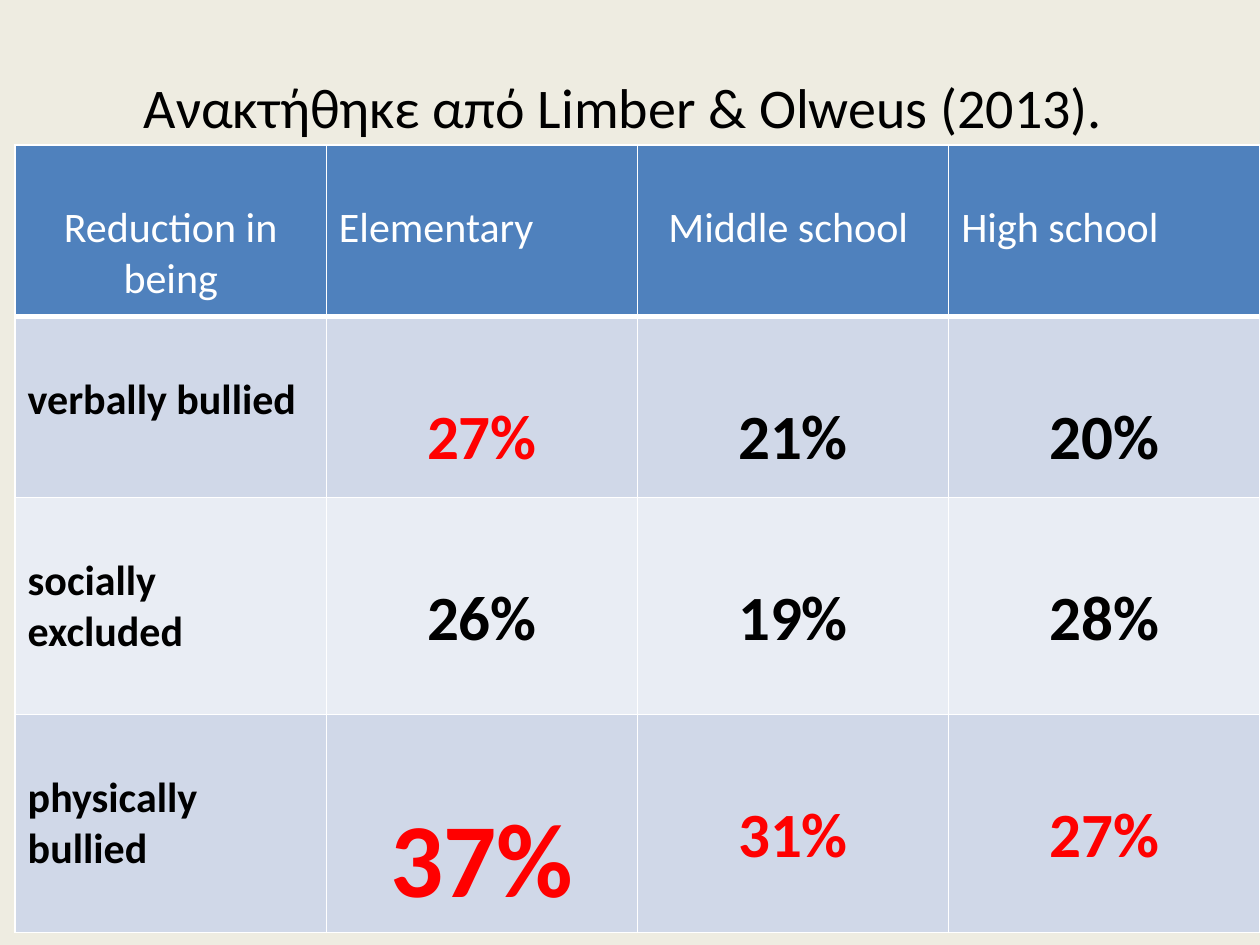
"""Build a slide with a table of reductions in bullying by school level."""
from dataclasses import dataclass

from pptx import Presentation
from pptx import util as u
from pptx.dml.color import RGBColor
from pptx.enum import text
from pptx.oxml import parse_xml
from pptx.oxml.ns import nsdecls


@dataclass(frozen=True)
class Theme:
    """Colours, font and type sizes of the slide."""
    font: str = "Calibri"
    background: str = "EEECE1"
    header: str = "4F81BD"
    bands: tuple = ("D0D8E8", "E9EDF4")
    white: str = "FFFFFF"
    black: str = "000000"
    highlight: str = "FF0000"
    title_size: int = 32
    label_size: int = 24
    value_size: int = 36
    largest_size: int = 60


THEME = Theme()
LEFT, CENTER = text.PP_ALIGN.LEFT, text.PP_ALIGN.CENTER
COLUMN_WIDTH = 2.47
ROW_HEIGHTS = (1.36, 1.44, 1.72, 1.73)
LABEL_TOP, VALUE_TOP = 0.46, 0.66
HEADERS = (("Reduction in being", CENTER), ("Elementary", LEFT),
           ("Middle school ", CENTER), ("High school", LEFT))
ROWS = (("verbally bullied", ("27%", "21%", "20%")),
        ("socially excluded", ("26%", "19%", "28%")),
        ("physically bullied", ("37%", "31%", "27%")))
HIGHLIGHTED = {(1, 1), (3, 1), (3, 2), (3, 3)}
LARGEST = (3, 1)


def add_text(frame, wording, size, color, alignment, bold=False):
    """Write one run in the first paragraph of a text frame."""
    frame.word_wrap = True
    paragraph = frame.paragraphs[0]
    paragraph.alignment = alignment
    run = paragraph.add_run()
    run.text = wording
    run.font.name = THEME.font
    run.font.size = u.Pt(size)
    run.font.bold = bold
    run.font.color.rgb = RGBColor.from_string(color)


def add_borders(cell, bottom_width=1):
    """Draw white lines on the four sides of a cell."""
    properties = cell._tc.get_or_add_tcPr()
    widths = {"lnL": 1, "lnR": 1, "lnT": 1, "lnB": bottom_width}
    for index, (side, width) in enumerate(widths.items()):
        properties.insert(index, parse_xml(
            f'<a:{side} {nsdecls("a")} w="{u.Pt(width)}"><a:solidFill>'
            f'<a:srgbClr val="{THEME.white}"/></a:solidFill></a:{side}>'))


def fill_cell(cell, fill, top, *text_style, bottom_width=1):
    """Set the fill, top margin, borders and text of a cell."""
    cell.fill.solid()
    cell.fill.fore_color.rgb = RGBColor.from_string(fill)
    cell.margin_top = u.Inches(top)
    add_borders(cell, bottom_width)
    add_text(cell.text_frame, *text_style)


def add_title(slide, wording):
    """Add the centred title."""
    box = slide.shapes.add_textbox(u.Inches(0.5), u.Inches(0.3), u.Inches(9), u.Inches(1.09))
    box.text_frame.vertical_anchor = text.MSO_ANCHOR.MIDDLE
    add_text(box.text_frame, wording, THEME.title_size, THEME.black, CENTER)


def add_results_table(slide):
    """Add the table of reductions by kind of bullying and school level."""
    table = slide.shapes.add_table(
        len(ROW_HEIGHTS), len(HEADERS), u.Inches(0.12), u.Inches(1.15),
        u.Inches(COLUMN_WIDTH * len(HEADERS)), u.Inches(sum(ROW_HEIGHTS))).table
    table.first_row = table.horz_banding = False
    for column in table.columns:
        column.width = u.Inches(COLUMN_WIDTH)
    for row, height in zip(table.rows, ROW_HEIGHTS):
        row.height = u.Inches(height)
    for column, (wording, alignment) in enumerate(HEADERS):
        fill_cell(table.cell(0, column), THEME.header, LABEL_TOP, wording,
                  THEME.label_size, THEME.white, alignment, bottom_width=3)
    for row, (label, values) in enumerate(ROWS, start=1):
        band = THEME.bands[(row - 1) % 2]
        fill_cell(table.cell(row, 0), band, LABEL_TOP, label,
                  THEME.label_size, THEME.black, LEFT, True)
        for column, value in enumerate(values, start=1):
            place = (row, column)
            size = THEME.largest_size if place == LARGEST else THEME.value_size
            color = THEME.highlight if place in HIGHLIGHTED else THEME.black
            fill_cell(table.cell(*place), band, VALUE_TOP, value, size, color, CENTER, True)


def main():
    """Build and save the presentation."""
    presentation = Presentation()
    presentation.slide_width = u.Inches(10)
    presentation.slide_height = u.Inches(7.5)
    slide = presentation.slides.add_slide(presentation.slide_layouts[6])
    slide.background.fill.solid()
    slide.background.fill.fore_color.rgb = RGBColor.from_string(THEME.background)
    add_results_table(slide)
    add_title(slide, "Ανακτήθηκε από Limber & Olweus (2013). ")
    presentation.save("out.pptx")


if __name__ == "__main__":
    main()
